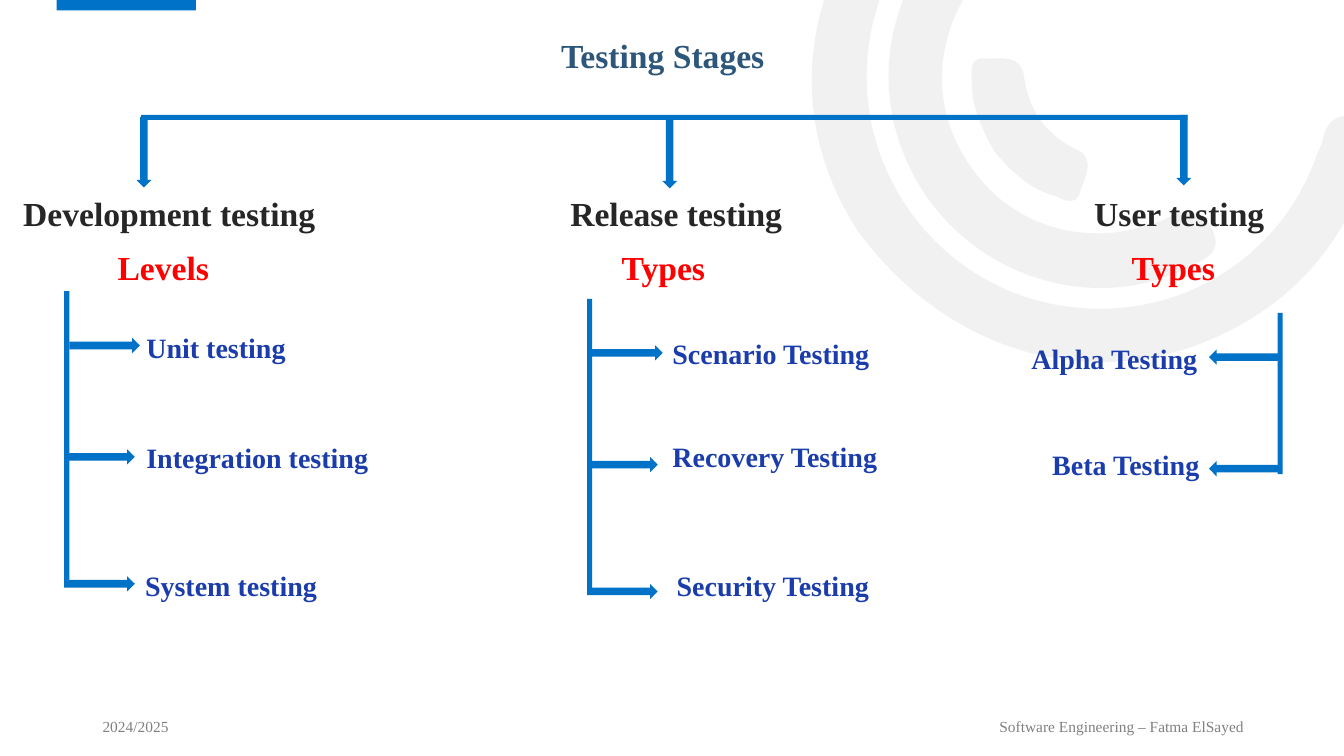
"""Build the Testing Stages slide: a tree of three stages with their levels and types."""
from lxml import etree
from pptx import Presentation
from pptx.dml.color import RGBColor
from pptx.enum.shapes import MSO_SHAPE
from pptx.enum.text import MSO_AUTO_SIZE, PP_ALIGN
from pptx.oxml.ns import qn
from pptx.util import Pt

RECT, DOWN = MSO_SHAPE.RECTANGLE, MSO_SHAPE.DOWN_ARROW
RIGHT, LEFT = MSO_SHAPE.RIGHT_ARROW, MSO_SHAPE.LEFT_ARROW
FIT, JUSTIFY = MSO_AUTO_SIZE.SHAPE_TO_FIT_TEXT, PP_ALIGN.JUSTIFY

COLORS = {"line": "0072C7", "title": "2C567A", "stage": "262626", "kind": "FF0000",
          "item": "1B3DAB", "footer": "808080", "ring": "E7E6E6"}
FONT = "Times New Roman"
STYLES = {
    "title": {"size": Pt(24), "bold": True},
    "stage": {"size": Pt(24), "bold": True},
    "kind": {"size": Pt(24), "bold": True},
    "item": {"size": Pt(20), "bold": True},
    "footer": {"size": Pt(11), "bold": False},
}
HEIGHTS = {"title": 36, "stage": 36, "kind": 36, "item": 31.7, "footer": 20.9}
LABELS = [
    ("footer", "2024/2025", 66.2, 508.7, 61.9),
    ("footer", "Software Engineering – Fatma ElSayed", 706.8, 508.7, 190.1),
    ("title", "Testing Stages", 393.8, 21.6, 161.3),
]
STAGES = [
    {"drop": (97.4, 83.5), "stem": (45.9, 207.9, 208.8), "arrow": RIGHT,
     "branches": [(49.5, 38.9), (45.9, 118.4), (45.9, 209.1)],
     "labels": [("stage", "Development testing", -12.8, 134.6, 247.7),
                ("kind", "Levels", 76.9, 172.8, 80.6),
                ("item", "Unit testing", 97.4, 232.6, 114.5),
                ("item", "Integration testing", 97.4, 311, 174.2),
                ("item", "System testing", 96.5, 402.5, 138.2)]},
    {"drop": (473, 84.2), "stem": (419.4, 213.5, 208.8), "arrow": RIGHT,
     "branches": [(423, 38.5), (419.4, 118.4), (419.4, 209)],
     "labels": [("stage", "Release testing", 378, 134.6, 190.1),
                ("kind", "Types", 437, 172.8, 74.9),
                ("item", "Scenario Testing", 473.2, 236.9, 156.2),
                ("item", "Recovery Testing", 473.2, 310.3, 162),
                ("item", "Security Testing", 476.2, 402.5, 152.6)]},
    {"drop": (840.2, 82.1), "stem": (912.6, 223.6, 115.2), "arrow": LEFT,
     "branches": [(863.6, 31.5), (863.6, 111.2)],
     "labels": [("stage", "User testing", 752.2, 134.6, 159.8),
                ("kind", "Types", 801.2, 172.8, 74.9),
                ("item", "Alpha Testing", 729.6, 240.1, 133.9),
                ("item", "Beta Testing", 744.5, 316.1, 120.2)]},
]
BARS = [(40.5, -1.2, 99.4, 8.6), (100.8, 82.1, 747.4, 3.6)]
ARROW_LENGTH, ARROW_WIDTH, STEM_WIDTH, INDENT = 50.4, 10.8, 3.6, 22.3
INCH = 72
RINGS = [
    [(8.51, 2.29),
     (7.99, 1.49, 7.87, 0.5, 8.38, -0.5), (8.9, -1.52, 9.76, -2.03, 10.9, -2.07),
     (11.05, -2.07, 11.21, -2.1, 11.31, -1.95), (11.44, -1.75, 11.27, -1.54, 10.98, -1.54),
     (9.67, -1.54, 8.65, -0.59, 8.6, 0.68), (8.56, 1.81, 9.36, 2.81, 10.46, 3.02),
     (11.6, 3.24, 12.7, 2.61, 13.07, 1.52), (13.09, 1.48, 13.11, 1.44, 13.12, 1.4),
     (13.16, 1.19, 13.27, 1.11, 13.49, 1.17), (13.73, 1.24, 13.67, 1.41, 13.61, 1.56),
     (13.34, 2.45, 12.78, 3.07, 11.91, 3.41), (10.7, 3.87, 9.36, 3.45, 8.51, 2.29)],
    [(9.22, 1.99),
     (8.62, 1.15, 8.69, 0.07, 9.4, -0.68), (9.51, -0.79, 9.62, -0.95, 9.8, -0.78),
     (9.95, -0.64, 9.97, -0.5, 9.79, -0.32), (9.25, 0.26, 9.2, 1.08, 9.65, 1.68),
     (10.08, 2.29, 10.88, 2.49, 11.61, 2.15), (11.82, 2.05, 11.93, 2.12, 12.03, 2.29),
     (12.13, 2.5, 11.97, 2.56, 11.83, 2.63), (10.96, 3.1, 9.83, 2.82, 9.22, 1.99)],
    [(9.87, 1.51),
     (9.75, 1.3, 9.64, 1.07, 9.64, 0.82), (9.64, 0.73, 9.61, 0.57, 9.76, 0.58),
     (9.92, 0.59, 10.13, 0.53, 10.16, 0.76), (10.21, 1.1, 10.36, 1.32, 10.67, 1.48),
     (10.88, 1.57, 10.76, 1.76, 10.72, 1.89), (10.68, 2.06, 10.55, 1.98, 10.45, 1.94),
     (10.21, 1.87, 10.03, 1.7, 9.87, 1.51)],
]


def paint(sp, color):
    sp.shadow.inherit = False
    sp.fill.solid()
    sp.fill.fore_color.rgb = RGBColor.from_string(COLORS[color])
    sp.line.fill.background()


def add_block(s, kind, *box):
    paint(s.shapes.add_shape(kind, *map(Pt, box)), "line")


def add_label(s, style, text, left, top, width):
    box = (left, top, width, HEIGHTS[style])
    tf = s.shapes.add_textbox(*map(Pt, box)).text_frame
    tf.word_wrap, tf.auto_size = False, FIT
    p = tf.paragraphs[0]
    if style == "stage":
        p.alignment = JUSTIFY
        p._p.get_or_add_pPr().set("marL", str(Pt(INDENT)))
    r = p.add_run()
    r.text, r.font.name = text, FONT
    r.font.color.rgb = RGBColor.from_string(COLORS[style])
    for name, value in STYLES[style].items():
        setattr(r.font, name, value)


def add_ring(s, ring):
    start, *curves = [[Pt(INCH * v) for v in part] for part in ring]
    builder = s.shapes.build_freeform(*start)
    builder.add_line_segments([curve[4:] for curve in curves], close=True)
    sp = builder.convert_to_shape()
    paint(sp, "ring")
    spPr = sp._element.spPr
    etree.SubElement(spPr.find(qn("a:solidFill"))[0], qn("a:alpha"), val="53000")
    segments = list(spPr.iter(qn("a:lnTo")))
    for segment, curve in zip(segments, curves):
        bezier = etree.Element(qn("a:cubicBezTo"))
        for x, y in zip(curve[::2], curve[1::2]):
            etree.SubElement(bezier, qn("a:pt"), x=str(x - sp.left), y=str(y - sp.top))
        segment.getparent().replace(segment, bezier)


def add_stage(s, stage):
    add_block(s, DOWN, *stage["drop"], ARROW_WIDTH, ARROW_LENGTH)
    left, top, height = stage["stem"]
    add_block(s, RECT, left, top, STEM_WIDTH, height)
    for x, y in stage["branches"]:
        add_block(s, stage["arrow"], x, top + y - ARROW_WIDTH / 2, ARROW_LENGTH, ARROW_WIDTH)
    for label in stage["labels"]:
        add_label(s, *label)


def main():
    prs = Presentation()
    prs.slide_width, prs.slide_height = Pt(960), Pt(540)
    s = prs.slides.add_slide(prs.slide_layouts[6])
    for ring in RINGS:
        add_ring(s, ring)
    for bar in BARS:
        add_block(s, RECT, *bar)
    for label in LABELS:
        add_label(s, *label)
    for stage in STAGES:
        add_stage(s, stage)
    prs.save("out.pptx")


if __name__ == "__main__":
    main()
